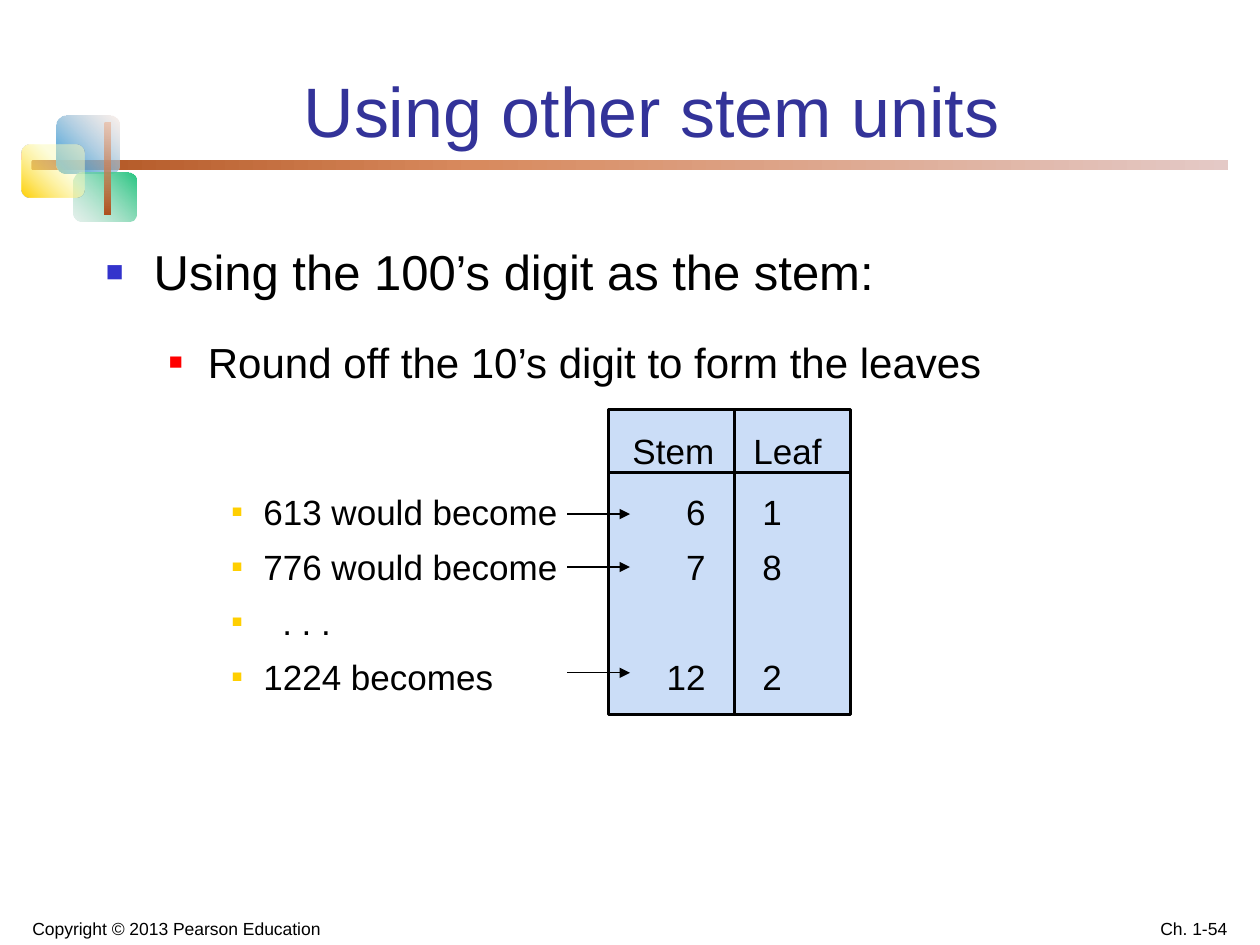
from pptx import Presentation
from pptx.dml.color import RGBColor
from pptx.enum.shapes import MSO_CONNECTOR as CONN, MSO_SHAPE as SHAPE
from pptx.enum.text import MSO_ANCHOR as ANCHOR, PP_ALIGN as ALIGN
from pptx.oxml import parse_xml
from pptx.oxml.ns import nsdecls
from pptx.util import Inches, Pt

W, H = 10, 7.5
FONT = "Arial"
BLACK, TITLE, PANEL = "000000", "333399", "CBDDF7"

# Outline levels: size, left indent, hanging, line spacing, space before, bullet colour, bullet %
LEVELS = [
    (28, 0.38, 0.38, 1.0, 0, "3333CC", 60),
    (24, 0.81, 0.31, 1.5, 6, "FF0000", 55),
    (20, 1.25, 0.25, 1.1, 5, "FFCF01", 50),
]


def rgb(hex_str):
    return RGBColor.from_string(hex_str)


def add_xml(parent, xml):
    """Append DrawingML elements written without their namespace."""
    for child in list(parse_xml(f"<a:wrap {nsdecls('a')}>{xml}</a:wrap>")):
        parent.append(child)


def add_tabs(p, stops):
    tabs = "".join(f'<a:tab pos="{Inches(x)}" algn="{align}"/>' for x, align in stops)
    add_xml(p._p.get_or_add_pPr(), f"<a:tabLst>{tabs}</a:tabLst>")


def style(p, size, color=BLACK):
    for r in p.runs:
        r.font.size, r.font.name = Pt(size), FONT
        r.font.color.rgb = rgb(color)


def text_box(slide, box, anchor=ANCHOR.TOP):
    tf = slide.shapes.add_textbox(*map(Inches, box)).text_frame
    tf.word_wrap, tf.vertical_anchor = True, anchor
    tf.margin_left = tf.margin_right = Inches(0.09)
    return tf


def label(slide, box, text, size, color=BLACK, align=ALIGN.LEFT, anchor=ANCHOR.BOTTOM):
    p = text_box(slide, box, anchor).paragraphs[0]
    p.text, p.alignment = text, align
    style(p, size, color)
    return p


def line(slide, start, end, width, arrow=False):
    points = map(Inches, (*start, *end))
    cn = slide.shapes.add_connector(CONN.STRAIGHT, *points)
    cn.line.color.rgb, cn.line.width = rgb(BLACK), Pt(width)
    if arrow:
        add_xml(cn.line._get_or_add_ln(), '<a:tailEnd type="triangle"/>')
    add_xml(cn._element.spPr, "<a:effectLst/>")


def gradient_block(slide, box, angle, stops):
    """Rounded block; each stop is position %, colour, opacity %."""
    sp = slide.shapes.add_shape(SHAPE.ROUNDED_RECTANGLE, *map(Inches, box))
    sp.line.fill.background()
    sp.fill.gradient()
    grad = sp._element.spPr.find("{*}gradFill")
    for child in list(grad):
        grad.remove(child)
    gs = "".join(
        f'<a:gs pos="{pos * 1000}"><a:srgbClr val="{color}">'
        f'<a:alpha val="{alpha * 1000}"/></a:srgbClr></a:gs>'
        for pos, color, alpha in stops)
    add_xml(grad, f'<a:gsLst>{gs}</a:gsLst><a:lin ang="{angle * 60000}" scaled="0"/>')
    sp.shadow.inherit = False


def decoration(slide, x, y):
    """Rule and overlapping blocks, placed from their top-left corner."""
    blocks = [
        ((0.08, 0.35, 9.5, 0.08), 0,
         [(0, "AE511E", 100), (37, "D88A5E", 100), (100, "E4C9C6", 100)]),
        ((0.28, 0, 0.5, 0.46), 315, [(0, "2895D8", 100), (100, "F7E2D9", 50)]),
        ((0.41, 0.45, 0.5, 0.39), 135, [(0, "25C580", 100), (100, "CCE2D9", 50)]),
        ((0, 0.23, 0.5, 0.42), 315, [(0, "FFCF01", 100), (63, "FCFCBC", 50)]),
        ((0.66, 0.05, 0.05, 0.73), 270, [(0, "AE511E", 100), (100, "EAA782", 50)]),
    ]
    for (dx, dy, w, h), angle, stops in blocks:
        gradient_block(slide, (x + dx, y + dy, w, h), angle, stops)


def stem_leaf_panel(slide, x, y, w, h):
    """Panel with a header row, a column divider and its headings."""
    sp = slide.shapes.add_shape(SHAPE.RECTANGLE, *map(Inches, (x, y, w, h)))
    sp.fill.solid()
    sp.fill.fore_color.rgb = rgb(PANEL)
    sp.line.color.rgb, sp.line.width = rgb(BLACK), Pt(1.5)
    sp.shadow.inherit = False
    line(slide, (x, y + 0.5), (x + w, y + 0.5), 1.5)
    line(slide, (x + 1, y), (x + 1, y + h), 1.5)
    p = label(slide, (x + 0.1, y + 0.11, 2, 0.43), "Stem\tLeaf", 20, anchor=ANCHOR.TOP)
    add_tabs(p, [(0.96, "l")])


def outline(slide, box, items):
    """Bulleted outline; each item is level, text, extra indent, space before."""
    tf = text_box(slide, box)
    for i, (level, text, extra, before) in enumerate(items):
        p = tf.add_paragraph() if i else tf.paragraphs[0]
        size, left, hang, spacing, gap, color, percent = LEVELS[level]
        p.text, p.level, p.line_spacing = text, level, spacing
        p.space_before = Pt(before or gap)
        pPr = p._p.get_or_add_pPr()
        pPr.set("marL", str(Inches(left + extra)))
        pPr.set("indent", str(-Inches(hang + extra)))
        add_xml(pPr, f'<a:buClr><a:srgbClr val="{color}"/></a:buClr>'
                     f'<a:buSzPct val="{percent * 1000}"/>'
                     f'<a:buFont typeface="{FONT}"/><a:buChar char="■"/>')
        if "\t" in text:
            add_tabs(p, [(4.76, "r"), (5.21, "l")])
        style(p, size)


def footer(slide, y, h):
    label(slide, (W / 60, y, 5.33, h), "Copyright © 2013 Pearson Education", 10)
    label(slide, (W * 0.75, y, 2.33, h), "Ch. 1-54", 10, align=ALIGN.RIGHT)


def main():
    prs = Presentation()
    prs.slide_width, prs.slide_height = Inches(W), Inches(H)
    slide = prs.slides.add_slide(prs.slide_layouts[6])

    decoration(slide, 0.17, 0.92)
    label(slide, (0.92, 0.33, 8.5, 0.92), "Using other stem units", 40, TITLE, ALIGN.CENTER)
    stem_leaf_panel(slide, 4.83, 3.25, 1.92, 2.42)
    outline(slide, (0.75, 1.87, 7.75, 4.46), [
        (0, "Using the 100’s digit as the stem:", 0, 0),
        (1, "Round off the 10’s digit to form the leaves", 0, 0),
        (2, "613 would become\t6\t1", 0, 57),
        (2, "776 would become\t7\t8", 0, 0),
        (2, ". . .", 0.15, 0),
        (2, "1224 becomes\t12\t2", 0, 0),
    ])
    # Arrows on the first, second and fourth example rows
    for row in (0, 1, 3):
        y = 4.08 + 0.42 * row
        line(slide, (4.5, y), (5, y), 0.75, arrow=True)
    footer(slide, 7.15, 0.35)
    prs.save("out.pptx")


if __name__ == "__main__":
    main()
